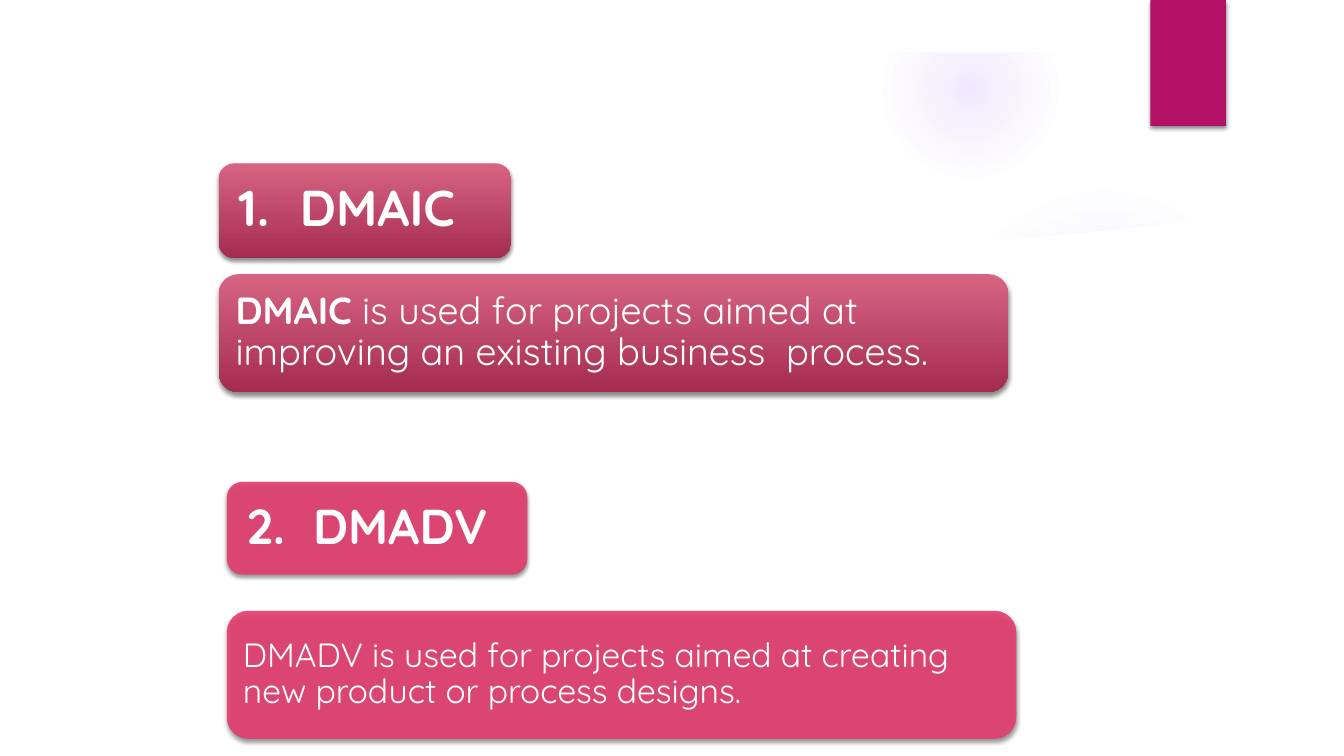
import pptx
import pptx.util
import pptx.dml.color
import pptx.enum.shapes
import pptx.enum.text
import pptx.oxml
import pptx.oxml.ns

Inches = pptx.util.Inches
KINDS = pptx.enum.shapes.MSO_SHAPE
HUES = {"white": "FFFFFF", "glow": "9B6BF2", "flag": "B31166", "top": "D76483",
        "base": "A52C51", "pink": "E33D6F", "shade": "000000"}
SPACE = 'xmlns:a="http://schemas.openxmlformats.org/drawingml/2006/main"'


def tint(name):
    """Return the named colour."""
    return pptx.dml.color.RGBColor.from_string(HUES[name])


def add_xml(host, text):
    """Append an XML fragment to an element and return it."""
    part = pptx.oxml.parse_xml(text.replace(">", f" {SPACE}>", 1))
    host.append(part)
    return part


def paint(shape, name, alpha=100):
    """Give a shape a solid fill and no line."""
    shape.shadow.inherit = False
    shape.line.fill.background()
    shape.fill.solid()
    shape.fill.fore_color.rgb = tint(name)
    if alpha < 100:
        color = shape.fill._xPr.find(".//" + pptx.oxml.ns.qn("a:srgbClr"))
        add_xml(color, f'<a:alpha val="{alpha * 1000}"></a:alpha>')


def add_form(slide, kind, place, name, alpha=100):
    """Add a filled preset shape at left, top, width, height."""
    shape = slide.shapes.add_shape(kind, *map(Inches, place))
    paint(shape, name, alpha)
    return shape


def cast(shape):
    """Drop a soft shadow below a shape."""
    host = shape._element.spPr.find(pptx.oxml.ns.qn("a:effectLst"))
    add_xml(host, '<a:outerShdw blurRad="38100" dist="25400" dir="5400000" rotWithShape="0">'
                  f'<a:srgbClr val="{HUES["shade"]}"><a:alpha val="45000"/></a:srgbClr>'
                  '</a:outerShdw>')


def add_glow(slide, place, stops):
    """Add a round glow that fades outward."""
    shape = add_form(slide, KINDS.OVAL, place, "glow")
    marks = "".join(f'<a:gs pos="{pos * 1000}"><a:srgbClr val="{HUES["glow"]}">'
                    f'<a:alpha val="{alpha * 1000}"/></a:srgbClr></a:gs>'
                    for pos, alpha in stops)
    props = shape._element.spPr
    fade = add_xml(props, f'<a:gradFill><a:gsLst>{marks}</a:gsLst><a:path path="circle">'
                          '<a:fillToRect l="50000" t="50000" r="50000" b="50000"/>'
                          '</a:path></a:gradFill>')
    props.replace(props.find(pptx.oxml.ns.qn("a:solidFill")), fade)


def add_panel(slide):
    """Add the white panel with a curved top edge."""
    edge = [(0.5, 2.04), (2.49, 2.27), (4.44, 2.41), (6.82, 2.48), (8.4, 2.46),
            (9.49, 2.41), (10.32, 2.35), (11.16, 2.27), (12, 2.17), (12.84, 2.04)]
    points = [(Inches(x), Inches(y)) for x, y in edge + [(12.84, 7), (0.5, 7)]]
    pen = slide.shapes.build_freeform(*points[0])
    pen.add_line_segments(points[1:], close=True)
    paint(pen.convert_to_shape(), "white")


def add_card(slide, place, runs, size, inset, shaded, tab=None):
    """Add a rounded card with left-aligned text."""
    if shaded:
        shape = add_form(slide, KINDS.ROUNDED_RECTANGLE, place, "top")
        shape.fill.gradient()
        shape.fill.gradient_angle = 270
        for stop, name, pos in zip(shape.fill.gradient_stops, ("top", "base"), (0, 1)):
            stop.color.rgb = tint(name)
            stop.position = pos
    else:
        shape = add_form(slide, KINDS.ROUNDED_RECTANGLE, place, "pink", 90)
    cast(shape)
    frame = shape.text_frame
    form = {"word_wrap": True, "vertical_anchor": pptx.enum.text.MSO_ANCHOR.MIDDLE}
    for side in ("left", "right", "top", "bottom"):
        form["margin_" + side] = Inches(inset)
    for key, value in form.items():
        setattr(frame, key, value)
    para = frame.paragraphs[0]
    para.alignment = pptx.enum.text.PP_ALIGN.LEFT
    para.line_spacing = 0.9
    if tab:
        add_xml(para._p.get_or_add_pPr(),
                f'<a:tabLst><a:tab pos="{Inches(tab)}" algn="l"/></a:tabLst>')
    for text, bold in runs:
        run = para.add_run()
        run.text = text
        look = {"name": "Quicksand", "size": pptx.util.Pt(size), "bold": bold}
        for key, value in look.items():
            setattr(run.font, key, value)
        run.font.color.rgb = tint("white")


def main():
    """Build the slide and save it."""
    deck = pptx.Presentation()
    deck.slide_width, deck.slide_height = Inches(13.33), Inches(7.5)
    slide = deck.slides.add_slide(deck.slide_layouts[6])
    add_glow(slide, (9.41, 1.83, 3.08, 3.08), [(0, 7), (36, 6), (69, 0)])
    add_glow(slide, (8.75, 0.01, 1.75, 1.75), [(0, 14), (36, 7), (73, 0)])
    add_panel(slide)
    add_form(slide, KINDS.RECTANGLE, (0, 0, 13.33, 0.52), "white")
    cast(add_form(slide, KINDS.RECTANGLE, (11.41, 0, 0.75, 1.25), "flag"))
    cards = [
        ((2.17, 1.62, 2.9, 0.94), [("1.\tDMAIC", True)], 36, 0.15, True, 0.61),
        ((2.17, 2.72, 7.83, 1.17),
         [("DMAIC", True),
          (" is used for projects aimed at improving an existing business  process.", False)],
         27, 0.11, True),
        ((2.25, 4.78, 2.98, 0.92), [("2.\tDMADV", True)], 35, 0.15, False, 0.66),
        ((2.25, 6.06, 7.83, 1.27),
         [("DMADV is used for projects aimed at creating new product or process designs.",
           False)], 24, 0.1, False),
    ]
    for card in cards:
        add_card(slide, *card)
    deck.save("out.pptx")


if __name__ == "__main__":
    main()
